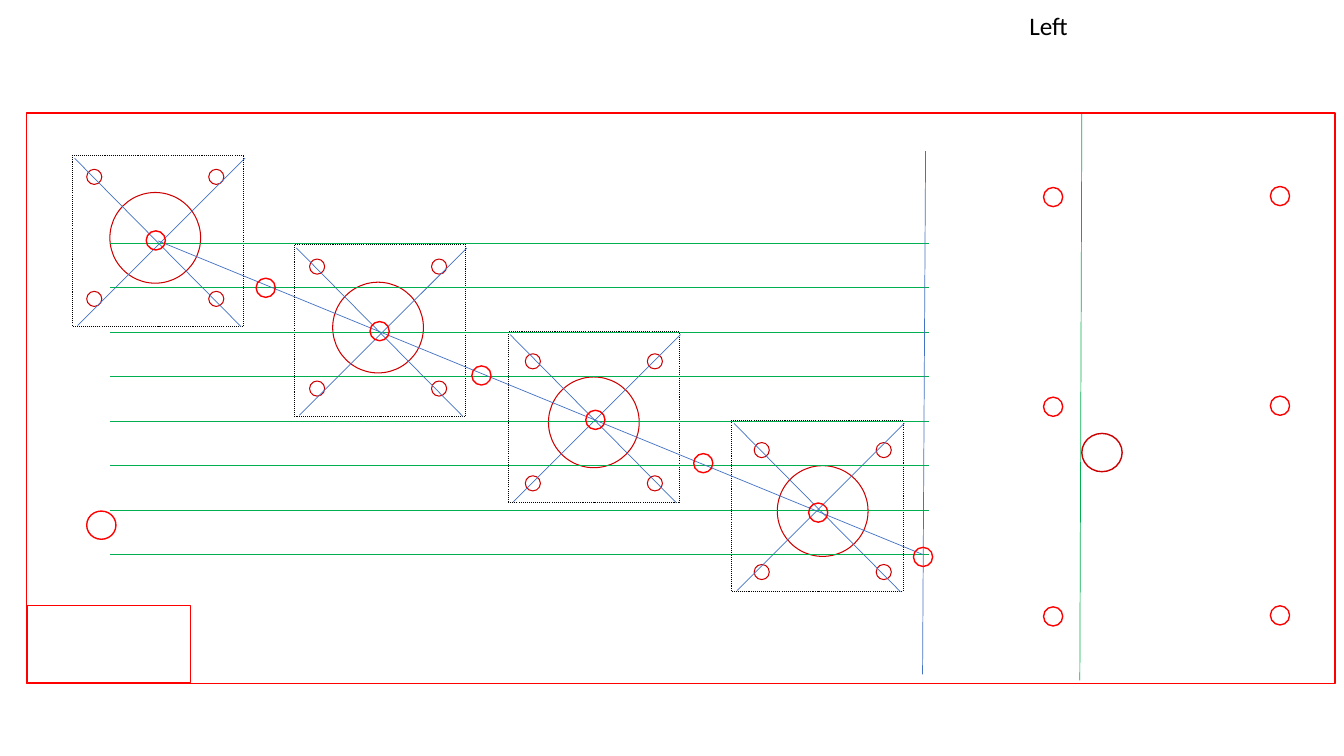
"""Draw the drilling plan of the left panel."""
from itertools import product
from lxml.etree import SubElement
from pptx import Presentation
from pptx.dml.color import RGBColor
from pptx.enum.dml import MSO_LINE
from pptx.enum.shapes import MSO_CONNECTOR, MSO_SHAPE
from pptx.enum.text import MSO_AUTO_SIZE
from pptx.oxml.ns import qn
from pptx.util import Pt

SCALE = 9144
WIDE, HIGH = 1333, 750
RED, DARK, BLUE, GREEN, BLACK = "FF0000", "CC0000", "4472C4", "00B050", "000000"

PLATES = [((72, 154), (109, 191)), ((292, 243), (330, 280)),
          ((504, 329), (544, 374)), ((726, 417), (771, 462))]
PLATE, HOLE, SCREW, PIN = 170, 90, 15, 19
CORNERS = (-23, 98)
CROSS = [(2, 3, 167, 170), (171, 3, 5, 169)]

RAILS, TOP, BOTTOM = 8, 241, 550
PINS = [(145, 229), (254, 276), (367, 319), (468, 363),
        (581, 407), (688, 450), (802, 499), (906, 543)]
MOUNTS = [(1035, 186), (1260, 185)]
MOUNT_GAP, MOUNT_ROWS = 208, 3

GUIDES = [(915, 669, 918, 150, BLUE), (915, 550, 157, 239, BLUE),
          (1071, 675, 1073, 112, GREEN)]
FRAMES = [(26, 112, 1298, 566), (27, 601, 162, 76)]
PORTS = [(86, 507, 29, 28, RED), (1073, 430, 40, 38, DARK)]


def px(*nums):
    return [round(n * SCALE) for n in nums]


def color(hue):
    return RGBColor.from_string(hue)


def outline(kind, x, y, w, h, hue, size=1, dash=None):
    shape = slide.shapes.add_shape(kind, *px(x, y, w, h))
    shape.shadow.inherit = False
    shape.fill.background()
    shape.line.color.rgb = color(hue)
    shape.line.width = Pt(size)
    if dash:
        shape.line.dash_style = dash


def circle(x, y, w, h, hue, size=1):
    outline(MSO_SHAPE.OVAL, x, y, w, h, hue, size)


def rule(x1, y1, x2, y2, hue):
    line = slide.shapes.add_connector(MSO_CONNECTOR.STRAIGHT, *px(x1, y1, x2, y2))
    line.line.color.rgb = color(hue)
    line.line.width = Pt(0.5)
    SubElement(line._element.spPr, qn("a:effectLst"))


def label(text, x, y, w, h, size=18, hue=BLACK, face="Calibri"):
    box = slide.shapes.add_textbox(*px(x, y, w, h))
    frame = box.text_frame
    frame.word_wrap = False
    frame.auto_size = MSO_AUTO_SIZE.SHAPE_TO_FIT_TEXT
    run = frame.paragraphs[0].add_run()
    run.text = text
    run.font.size = Pt(size)
    run.font.name = face
    run.font.color.rgb = color(hue)


def plate(left, top, x, y):
    outline(MSO_SHAPE.RECTANGLE, left, top, PLATE, PLATE, BLACK, 0.75,
            MSO_LINE.ROUND_DOT)
    circle(x, y, HOLE, HOLE, DARK, 0.75)
    for down, over in product(CORNERS, CORNERS):
        circle(x + over, y + down, SCREW, SCREW, DARK, 0.75)
    for x1, y1, x2, y2 in CROSS:
        rule(left + x1, top + y1, left + x2, top + y2, BLUE)


deck = Presentation()
deck.slide_width, deck.slide_height = px(WIDE, HIGH)
slide = deck.slides.add_slide(deck.slide_layouts[6])

for corner, hole in PLATES:
    plate(*corner, *hole)
for i in range(RAILS):
    y = TOP + i * (BOTTOM - TOP) / (RAILS - 1)
    rule(921, y, 109, y, GREEN)
for guide in GUIDES:
    rule(*guide)
for x, y in PINS:
    circle(x, y, PIN, PIN, RED)
for frame in FRAMES:
    outline(MSO_SHAPE.RECTANGLE, *frame, RED)
for (x, y), row in product(MOUNTS, range(MOUNT_ROWS)):
    circle(x, y + row * MOUNT_GAP, PIN, PIN, RED)
for port in PORTS:
    circle(*port)
label("Left", 1011, 5, 62, 40)

deck.save("out.pptx")
